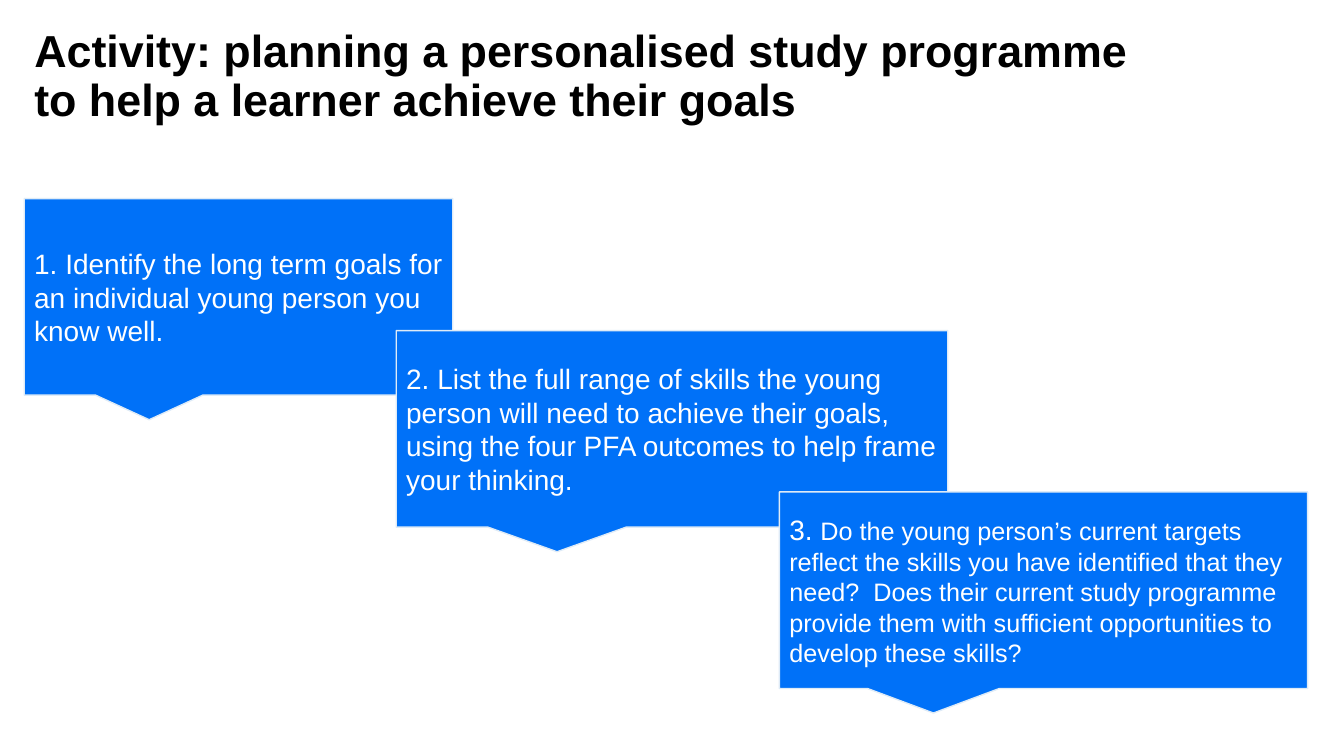
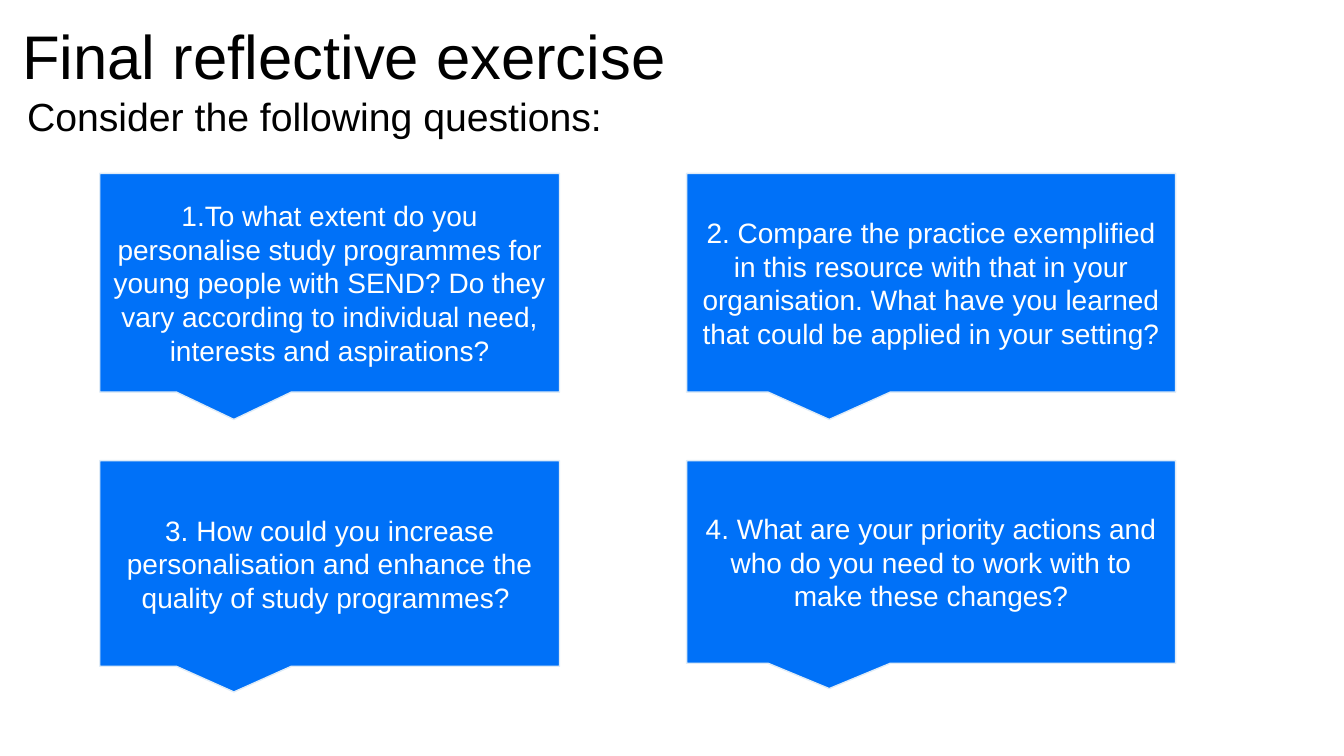
import dataclasses

import pptx
import pptx.dml.color
import pptx.enum.shapes
import pptx.enum.text
import pptx.util

Inches = pptx.util.Inches
Pt = pptx.util.Pt
RGB = pptx.dml.color.RGBColor
Align = pptx.enum.text.PP_ALIGN
Anchor = pptx.enum.text.MSO_ANCHOR


@dataclasses.dataclass(frozen=True)
class Theme:
    font: str = "Arial"
    text: RGB = RGB(0x00, 0x00, 0x00)
    callout_text: RGB = RGB(0xFF, 0xFF, 0xFF)
    callout_fill: RGB = RGB(0x00, 0x71, 0xF8)
    callout_line: RGB = RGB(0xDE, 0xEB, 0xF7)
    title_size: int = 44
    long_title_size: int = 32
    lead_size: int = 28
    callout_size: int = 20
    dense_size: int = 18
    heading_spacing: float = 0.9


THEME = Theme()
HEADING_WIDTH = 11.5


def format_run(r, size, color, bold=False):
    r.font.name = THEME.font
    r.font.size = Pt(size)
    r.font.color.rgb = color
    r.font.bold = bold


def set_heading(sp, text, size, bold=False, anchor=Anchor.MIDDLE):
    tf = sp.text_frame
    tf.text = text
    tf.word_wrap = True
    tf.auto_size = pptx.enum.text.MSO_AUTO_SIZE.NONE
    tf.vertical_anchor = anchor
    p = tf.paragraphs[0]
    p.alignment = Align.LEFT
    p.line_spacing = THEME.heading_spacing
    format_run(p.runs[0], size, THEME.text, bold)


def add_titled_slide(prs, title, left, top, size, bold=False):
    s = prs.slides.add_slide(prs.slide_layouts.get_by_name("Title Only"))
    sp = s.shapes.title
    sp.left, sp.top = Inches(left), Inches(top)
    sp.width, sp.height = Inches(HEADING_WIDTH), Inches(1.18)
    set_heading(sp, title, size, bold)
    return s


def add_lead(s, text, left, top, height):
    sp = s.shapes.add_textbox(
        Inches(left), Inches(top), Inches(HEADING_WIDTH), Inches(height)
    )
    set_heading(sp, text, THEME.lead_size, anchor=Anchor.TOP)


def add_callout(s, left, top, width, height, parts, align):
    sp = s.shapes.add_shape(
        pptx.enum.shapes.MSO_SHAPE.RECTANGULAR_CALLOUT,
        Inches(left), Inches(top), Inches(width), Inches(height),
    )
    sp.shadow.inherit = False
    sp.fill.solid()
    sp.fill.fore_color.rgb = THEME.callout_fill
    sp.line.color.rgb = THEME.callout_line
    sp.line.width = Pt(1)
    tf = sp.text_frame
    tf.word_wrap = True
    tf.vertical_anchor = Anchor.MIDDLE
    p = tf.paragraphs[0]
    p.alignment = align
    for text, size in parts:
        r = p.add_run()
        r.text = text
        format_run(r, size, THEME.callout_text)


def build_activity(prs):
    s = add_titled_slide(
        prs,
        "Activity: planning a personalised study programme to help a learner "
        "achieve their goals",
        0.24, 0.18, THEME.long_title_size, bold=True,
    )
    steps = [
        (0.24, 1.97, 4.25, [
            ("1. Identify the long term goals for an individual young person "
             "you know well.", THEME.callout_size),
        ]),
        (3.93, 3.28, 5.47, [
            ("2. List the full range of skills the young person will need to "
             "achieve their goals, using the four PFA outcomes to help frame "
             "your thinking.", THEME.callout_size),
        ]),
        (7.73, 4.88, 5.24, [
            ("3. ", THEME.callout_size),
            ("Do the young person’s current targets reflect the skills you "
             "have identified that they need?  Does their current study "
             "programme provide them with sufficient opportunities to develop "
             "these skills?", THEME.dense_size),
        ]),
    ]
    for left, top, width, parts in steps:
        add_callout(s, left, top, width, 1.95, parts, Align.LEFT)


def build_reflection(prs):
    s = add_titled_slide(
        prs, "Final reflective exercise", 0.12, 0, THEME.title_size
    )
    add_lead(s, "Consider the following questions:", 0.17, 0.92, 4.76)
    columns = [(0.99, 4.56), (6.81, 4.85)]
    rows = [1.72, 4.57]
    questions = [
        (2.17, "1.To what extent do you personalise study programmes for young "
               "people with SEND? Do they vary according to individual need, "
               "interests and aspirations?"),
        (2.17, "2. Compare the practice exemplified in this resource with that "
               "in your organisation. What have you learned that could be "
               "applied in your setting?"),
        (2.04, "3. How could you increase personalisation and enhance the "
               "quality of study programmes? "),
        (2.01, "4. What are your priority actions and who do you need to work "
               "with to make these changes?"),
    ]
    for i, (height, text) in enumerate(questions):
        row, column = divmod(i, len(columns))
        left, width = columns[column]
        parts = [(text, THEME.callout_size)]
        add_callout(s, left, rows[row], width, height, parts, Align.CENTER)


def main():
    prs = pptx.Presentation()
    prs.slide_width = Inches(13.33)
    prs.slide_height = Inches(7.5)
    build_activity(prs)
    build_reflection(prs)
    prs.save("out.pptx")


if __name__ == "__main__":
    main()
